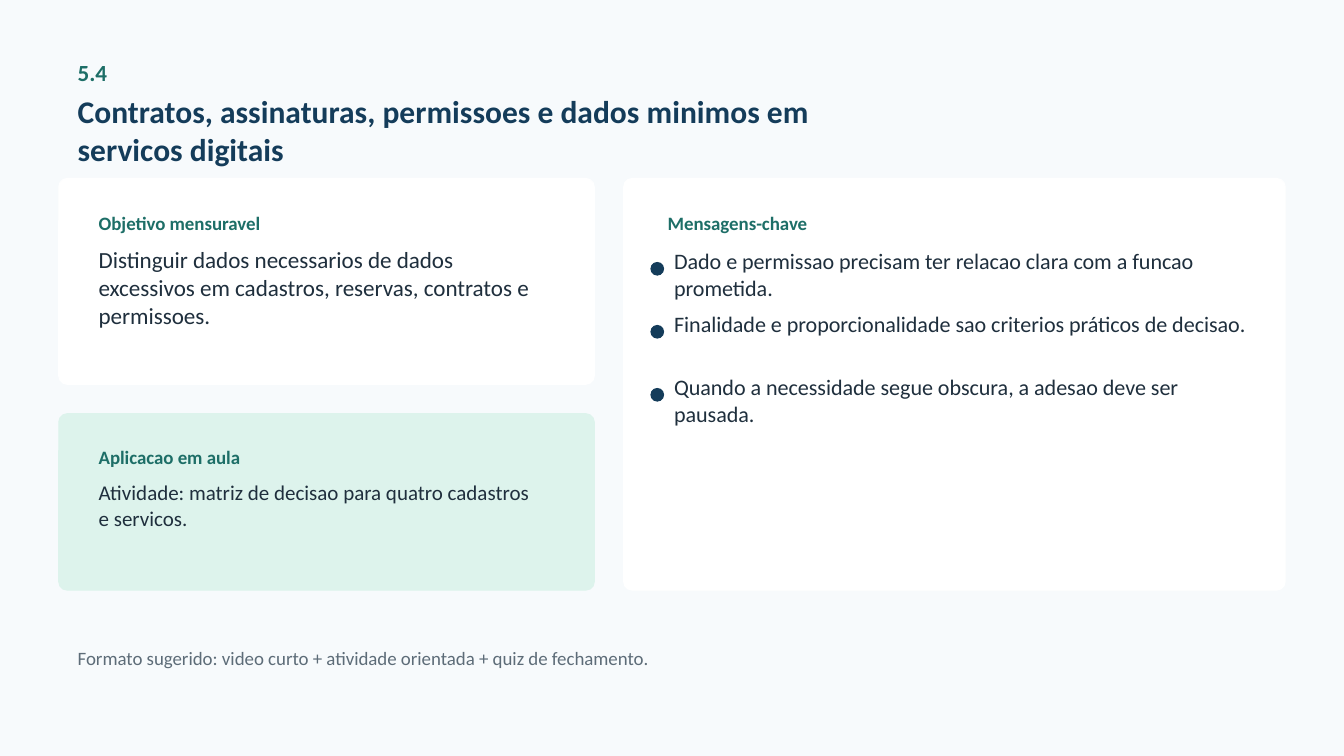
"""Builds the slide on contracts, permissions and minimal data."""
from dataclasses import dataclass

from pptx import Presentation
from pptx.dml.color import RGBColor
from pptx.enum.shapes import MSO_SHAPE
from pptx.enum.text import MSO_ANCHOR, MSO_AUTO_SIZE
from pptx.slide import Slide
from pptx.util import Emu, Pt

SCALE = 9525


@dataclass(frozen=True)
class Theme:
    font: str = "Calibri"
    page: str = "F7FAFC"
    white: str = "FFFFFF"
    mint: str = "DDF3EC"
    teal: str = "1D6E67"
    navy: str = "143C5A"
    ink: str = "1F2F3D"
    gray: str = "5D6C78"
    title: float = 22.5
    large: float = 16.5
    point: float = 15.75
    body: float = 15
    small: float = 13.5


@dataclass(frozen=True)
class Box:
    left: int
    top: int
    width: int
    height: int


@dataclass(frozen=True)
class Panel:
    box: Box
    fill: str
    round: int = 0


@dataclass(frozen=True)
class Label:
    box: Box
    text: str
    size: float
    color: str
    bold: bool = False
    pad: tuple[int, int] = (18, 14)


THEME = Theme()
STEP = 60
POINTS = (
    "Dado e permissao precisam ter relacao clara com a funcao prometida.",
    "Finalidade e proporcionalidade sao criterios práticos de decisao.",
    "Quando a necessidade segue obscura, a adesao deve ser pausada.",
)
CARDS = [
    Panel(Box(56, 170, 510, 196), THEME.white, 8),
    Panel(Box(594, 170, 630, 392), THEME.white, 8),
    Panel(Box(56, 394, 510, 168), THEME.mint, 8),
]
DOTS = [Panel(Box(620, 250 + i * STEP, 12, 12), THEME.navy) for i in range(len(POINTS))]
LABELS = [
    Label(Box(56, 42, 90, 40), "5.4", THEME.large, THEME.teal, True),
    Label(Box(56, 74, 790, 84),
          "Contratos, assinaturas, permissoes e dados minimos em servicos digitais",
          THEME.title, THEME.navy, True),
    Label(Box(76, 188, 220, 34), "Objetivo mensuravel", THEME.small, THEME.teal, True),
    Label(Box(76, 220, 458, 120),
          "Distinguir dados necessarios de dados excessivos em cadastros, "
          "reservas, contratos e permissoes.", THEME.large, THEME.ink),
    Label(Box(618, 188, 240, 34), "Mensagens-chave", THEME.small, THEME.teal, True),
    Label(Box(76, 410, 200, 30), "Aplicacao em aula", THEME.small, THEME.teal, True),
    Label(Box(76, 443, 458, 94),
          "Atividade: matriz de decisao para quatro cadastros e servicos.",
          THEME.body, THEME.ink),
    Label(Box(56, 602, 1180, 42),
          "Formato sugerido: video curto + atividade orientada + quiz de fechamento.",
          THEME.small, THEME.gray),
] + [
    Label(Box(642, 236 + i * STEP, 548, 52), text, THEME.point, THEME.ink, pad=(0, 0))
    for i, text in enumerate(POINTS)
]


def px(count: int) -> Emu:
    return Emu(count * SCALE)


def place(box: Box) -> tuple[Emu, ...]:
    return tuple(px(n) for n in (box.left, box.top, box.width, box.height))


def apply(target: object, values: dict[str, object]) -> None:
    for name, value in values.items():
        setattr(target, name, value)


def draw_panel(slide: Slide, panel: Panel) -> None:
    kind = MSO_SHAPE.ROUNDED_RECTANGLE if panel.round else MSO_SHAPE.OVAL
    shape = slide.shapes.add_shape(kind, *place(panel.box))
    if panel.round:
        shape.adjustments[0] = panel.round / min(panel.box.width, panel.box.height)
    shape.shadow.inherit = False
    for paint in (shape.fill, shape.line.fill):
        paint.solid()
        paint.fore_color.rgb = RGBColor.from_string(panel.fill)
    shape.line.width = Pt(0)


def draw_label(slide: Slide, label: Label) -> None:
    frame = slide.shapes.add_textbox(*place(label.box)).text_frame
    side, edge = (px(n) for n in label.pad)
    apply(frame, {
        "text": label.text, "word_wrap": True, "auto_size": MSO_AUTO_SIZE.NONE,
        "vertical_anchor": MSO_ANCHOR.TOP, "margin_left": side,
        "margin_right": side, "margin_top": edge, "margin_bottom": edge,
    })
    font = frame.paragraphs[0].runs[0].font
    apply(font, {"name": THEME.font, "size": Pt(label.size), "bold": label.bold})
    font.color.rgb = RGBColor.from_string(label.color)


def main() -> None:
    deck = Presentation()
    apply(deck, {"slide_width": px(1280), "slide_height": px(720)})
    slide = deck.slides.add_slide(deck.slide_layouts[6])
    slide.background.fill.solid()
    slide.background.fill.fore_color.rgb = RGBColor.from_string(THEME.page)
    for panel in CARDS + DOTS:
        draw_panel(slide, panel)
    for label in LABELS:
        draw_label(slide, label)
    deck.save("out.pptx")


if __name__ == "__main__":
    main()
